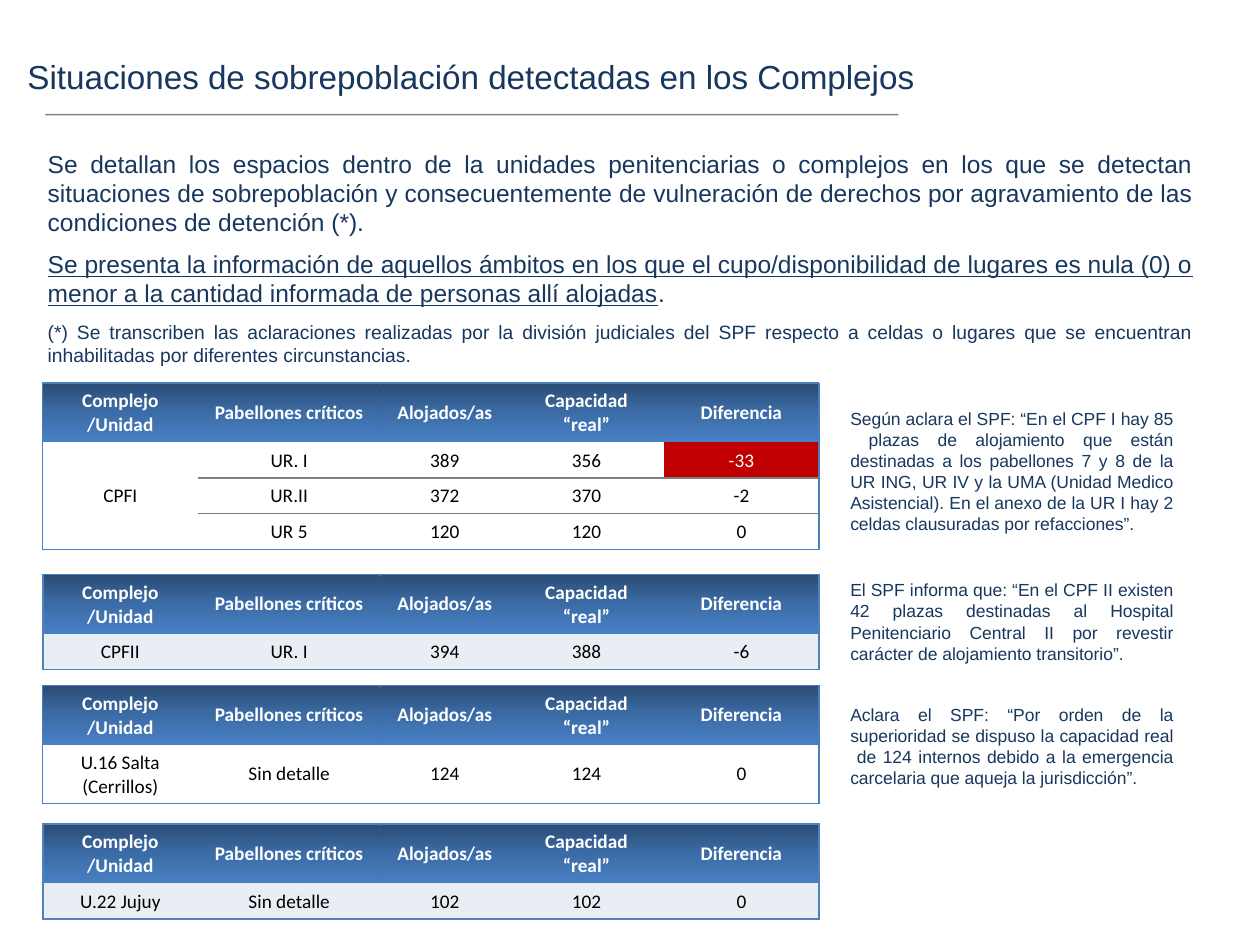
from typing import NamedTuple

from pptx import Presentation
from pptx.dml.color import RGBColor as RGB
from pptx.enum.shapes import MSO_CONNECTOR as Conn
from pptx.enum.text import MSO_ANCHOR as Anchor, PP_ALIGN as Align
from pptx.oxml import parse_xml
from pptx.oxml.ns import nsdecls
from pptx.util import Inches, Pt

COLORS = {
    "navy": "17375E", "black": "000000", "white": "FFFFFF", "red": "C00000",
    "band": "E9EDF4", "edge": "4B7EBC", "accent": "4F81BD", "grid": "7F7F7F",
}
HEADER_STOPS = [(0, "2A4C75"), (50, "3C6CA6"), (100, "4780C5")]
HEADERS = ["Complejo /Unidad", "Pabellones críticos", "Alojados/as",
           "Capacidad “real”", "Diferencia"]
COL_WIDTHS = [1.23, 1.45, 1.02, 1.23, 1.23]
TALL_ROW, LOW_ROW = 0.47, 0.28
TABLE_LEFT, NOTE_LEFT, NOTE_WIDTH = 0.34, 6.65, 2.76


class Run(NamedTuple):
    text: str
    size: float
    underline: bool = False


class Box(NamedTuple):
    left: float
    top: float
    width: float
    height: float
    paragraphs: list[list[Run]]
    align: Align = Align.JUSTIFY


class Complex(NamedTuple):
    top: float
    rows: list[list[str]]
    edge: str = "edge"
    edge_pt: float = 0.75
    fill: str | None = None
    row_height: float = LOW_ROW
    critical: tuple[int, int] | None = None


def note(top: float, height: float, text: str) -> Box:
    return Box(NOTE_LEFT, top, NOTE_WIDTH, height, [[Run(text, 10)]])


def color(name: str) -> RGB:
    return RGB.from_string(COLORS[name])


def add_run(p, text: str, font: str, size: float, col: str):
    r = p.add_run()
    r.text = text
    r.font.name = font
    r.font.size = Pt(size)
    r.font.color.rgb = color(col)
    return r


def add_box(s, box: Box) -> None:
    sp = s.shapes.add_textbox(*map(Inches, box[:4]))
    tf = sp.text_frame
    tf.word_wrap = True
    for i, runs in enumerate(box.paragraphs):
        p = tf.add_paragraph() if i else tf.paragraphs[0]
        p.alignment = box.align
        p.space_before = Pt(7 if i else 0)
        for run in runs:
            r = add_run(p, run.text, "Arial", run.size, "navy")
            r.font.underline = run.underline


def add_rule(s, left: float, right: float, y: float) -> None:
    line = s.shapes.add_connector(Conn.STRAIGHT, Inches(left), Inches(y),
                                  Inches(right), Inches(y))
    line.line.width = Pt(0.75)
    line.line.color.rgb = color("black")
    spPr = line._element.spPr
    spPr.find(".//{*}srgbClr").append(
        parse_xml(f'<a:alpha {nsdecls("a")} val="50000"/>'))
    spPr.append(parse_xml(f'<a:effectLst {nsdecls("a")}/>'))


def set_border(cell, side: str, col: str | None, width: float) -> None:
    paint = (f'<a:solidFill><a:srgbClr val="{COLORS[col]}"/></a:solidFill>'
             if col else "<a:noFill/>")
    cell._tc.get_or_add_tcPr().append(parse_xml(
        f'<a:ln{side} {nsdecls("a")} w="{Pt(width)}">{paint}</a:ln{side}>'))


def fill_header(cell) -> None:
    stops = "".join(f'<a:gs pos="{pos * 1000}"><a:srgbClr val="{c}"/></a:gs>'
                    for pos, c in HEADER_STOPS)
    cell._tc.get_or_add_tcPr().append(parse_xml(
        f'<a:gradFill {nsdecls("a")} rotWithShape="1"><a:gsLst>{stops}</a:gsLst>'
        '<a:lin ang="5400000" scaled="0"/></a:gradFill>'))


def add_complex(s, data: Complex) -> None:
    rows = [HEADERS] + data.rows
    last_row, last_col = len(rows) - 1, len(HEADERS) - 1
    heights = [TALL_ROW] + [data.row_height] * last_row
    frame = s.shapes.add_table(len(rows), len(HEADERS), Inches(TABLE_LEFT),
                               Inches(data.top), Inches(sum(COL_WIDTHS)),
                               Inches(sum(heights)))
    table = frame.table
    table.horz_banding = False
    table._tbl.tblPr.find("{*}tableStyleId").text = "{2D5ABB26-0587-4C30-8999-92F81FD0307C}"
    for column, width in zip(table.columns, COL_WIDTHS):
        column.width = Inches(width)
    for row, height in zip(table.rows, heights):
        row.height = Inches(height)
    if last_row > 1:
        table.cell(1, 0).merge(table.cell(last_row, 0))

    for i, texts in enumerate(rows):
        for j, text in enumerate(texts):
            cell = table.cell(i, j)
            critical = (i, j) == data.critical
            inner = "grid" if j and i > 1 else None
            below = "grid" if j and i else None
            closes = i == last_row or cell.is_merge_origin
            set_border(cell, "L", None if j else data.edge, data.edge_pt)
            set_border(cell, "R", data.edge if j == last_col else None, data.edge_pt)
            set_border(cell, "T", inner if i else data.edge, data.edge_pt)
            set_border(cell, "B", data.edge if closes else below, data.edge_pt)
            fill = "red" if critical else data.fill
            if i == 0:
                fill_header(cell)
            elif fill:
                cell.fill.solid()
                cell.fill.fore_color.rgb = color(fill)
            else:
                cell.fill.background()
            cell.vertical_anchor = Anchor.MIDDLE
            p = cell.text_frame.paragraphs[0]
            p.alignment = Align.CENTER
            if text:
                col = "white" if i == 0 or critical else "black"
                add_run(p, text, "Calibri", 11, col).font.bold = i == 0


BOXES = [
    Box(0.12, 0.4, 7.4, 0.62,
        [[Run("Situaciones de sobrepoblación detectadas en los Complejos", 19)]],
        Align.LEFT),
    Box(0.28, 1.13, 9.29, 2.12, [
        [Run("Se detallan los espacios dentro de la unidades penitenciarias o complejos en los que se detectan situaciones de sobrepoblación y consecuentemente de vulneración de derechos por agravamiento de las condiciones de detención (*).", 14)],
        [Run("Se presenta la información de aquellos ámbitos en los que el cupo/disponibilidad de lugares es nula (0) o menor a la cantidad informada de personas allí alojadas", 14, True),
         Run(".", 14)],
        [Run("(*) Se transcriben las aclaraciones realizadas por la división judiciales del SPF respecto a celdas o lugares que se encuentran inhabilitadas por diferentes circunstancias.", 11)],
    ]),
    note(3.19, 1.11, "Según aclara el SPF: “En el CPF I hay 85  plazas de alojamiento que están destinadas a los pabellones 7 y 8 de la UR ING, UR IV y la UMA (Unidad Medico Asistencial). En el anexo de la UR I hay 2 celdas clausuradas por refacciones”."),
    note(4.55, 0.77, "El SPF informa que: “En el CPF II existen 42 plazas destinadas al Hospital Penitenciario Central II por revestir carácter de alojamiento transitorio”."),
    note(5.54, 0.77, "Aclara el SPF: “Por orden de la superioridad se dispuso la capacidad real  de 124 internos debido a la emergencia carcelaria que aqueja la jurisdicción”."),
]
COMPLEXES = [
    Complex(3.04, [["CPFI", "UR. I", "389", "356", "-33"],
                   ["", "UR.II", "372", "370", "-2"],
                   ["", "UR 5", "120", "120", "0"]], critical=(1, 4)),
    Complex(4.56, [["CPFII", "UR. I", "394", "388", "-6"]], "accent", 1, "band"),
    Complex(5.44, [["U.16 Salta (Cerrillos)", "Sin detalle", "124", "124", "0"]],
            row_height=TALL_ROW),
    Complex(6.54, [["U.22 Jujuy", "Sin detalle", "102", "102", "0"]],
            "accent", 1, "band"),
]


def main() -> None:
    prs = Presentation()
    prs.slide_width, prs.slide_height = Inches(10), Inches(7.5)
    s = prs.slides.add_slide(prs.slide_layouts[6])
    for box in BOXES:
        add_box(s, box)
    add_rule(s, 0.36, 7.13, 0.91)
    for data in COMPLEXES:
        add_complex(s, data)
    prs.save("out.pptx")


if __name__ == "__main__":
    main()
